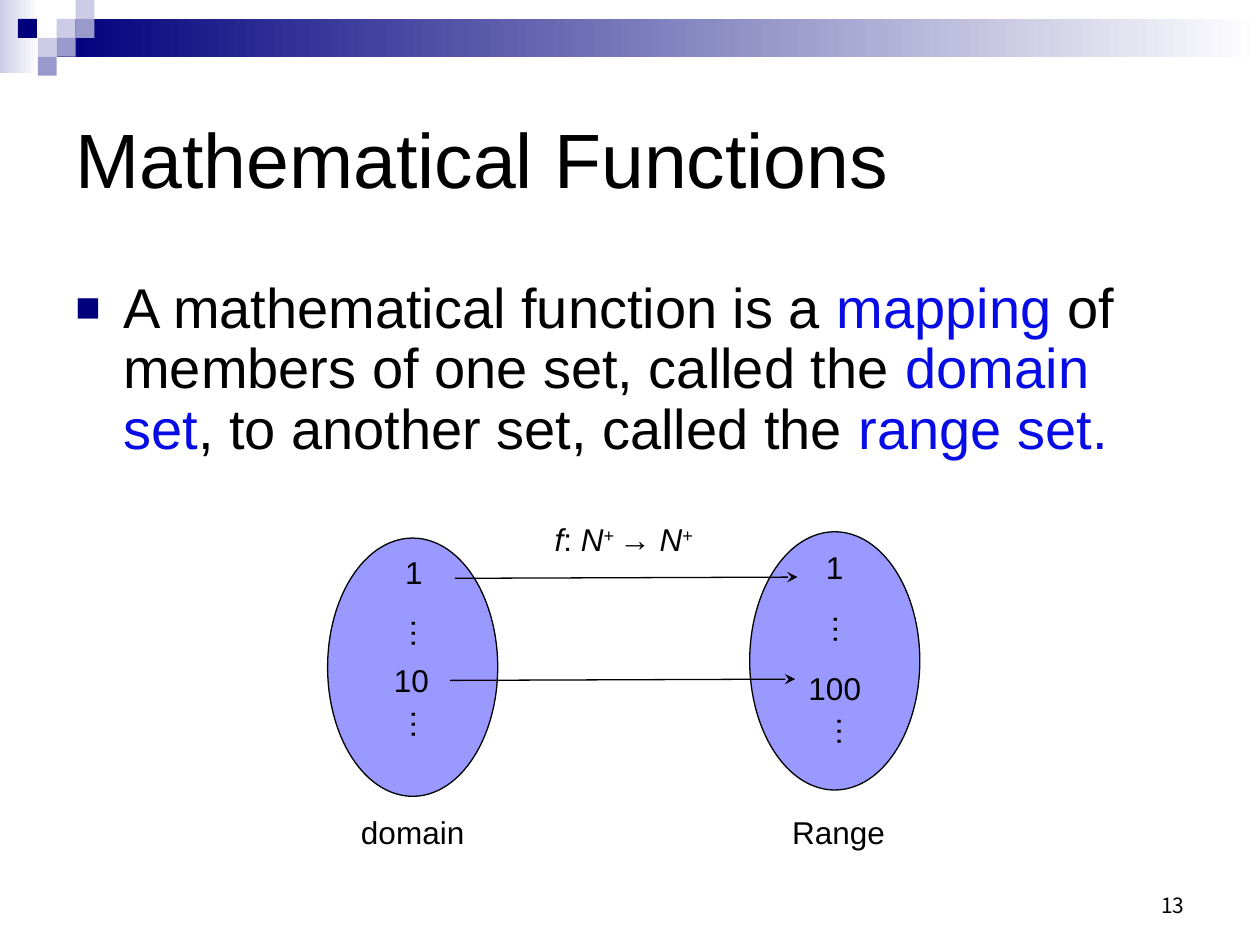
"""Build the Mathematical Functions slide: a definition above a domain-to-range mapping."""
import pptx
import pptx.util
import pptx.dml.color
import pptx.enum.shapes
import pptx.enum.text
import pptx.oxml
import pptx.oxml.ns

W, H = 10, 7.5
THEME = {
    "font": "Arial", "number_font": "Noto Sans CJK KR",
    "title": 44, "body": 32, "label": 18, "number": 12, "line": 0.75,
    "text": "000000", "accent": "070CE5", "set": "9999FF",
    "navy": "00007D", "mid": "9999CC", "pale": "CCCCE6", "white": "FFFFFF",
}
CELL = 0.15
BANDS = [((0, 0, 0.31, 0.58), "pale"), ((3 * CELL, CELL, W - 3 * CELL, 2 * CELL), "navy")]
SQUARES = [(3, 1, "pale"), (4, 0, "pale"), (4, 1, "mid"), (2, 2, "pale"),
           (0.95, 1, "navy"), (3, 2, "mid"), (2, 3, "mid")]
TITLE = [("Mathematical Functions", "")]
BODY = [("A mathematical function is a ", ""), ("mapping", "accent"),
        (" of members of one set, called the ", ""), ("domain set", "accent"),
        (", to another set, called the ", ""), ("range set.", "accent")]
FORMULA = [("f", "italic"), (": ", ""), ("N", "italic"), ("+ ", "super"),
           ("→ ", ""), ("N", "italic"), ("+", "super")]
OVAL = (1.35, 2.05)
LABEL_H = 0.4
SETS = [
    {"at": (5.95, 4.22), "labels": [("1", 0, 4.5, 0.34), ("100", 0, 5.46, 0.62),
                                    ("Range", 0.03, 6.6, 0.94)],
     "dots": [(-0.08, 5.0), (-0.05, 5.81)]},
    {"at": (2.6, 4.27), "labels": [("1", 0.01, 4.54, 0.34), ("10", -0.01, 5.4, 0.48),
                                   ("domain", 0, 6.6, 1.02)],
     "dots": [(-0.08, 5.03), (-0.08, 5.75)]},
]
ARROWS = [(3.57, 5.4, 6.31, 5.39), (3.61, 4.59, 6.33, 4.58)]
ALIGN = pptx.enum.text.PP_ALIGN
ANCHOR = pptx.enum.text.MSO_ANCHOR
SHAPE = pptx.enum.shapes.MSO_SHAPE


def inches(*values):
    return [pptx.util.Inches(v) for v in values]


def rgb(name):
    return pptx.dml.color.RGBColor.from_string(THEME[name])


def add_xml(parent, xml):
    ns = pptx.oxml.ns.nsdecls("a")
    parent.append(pptx.oxml.parse_xml(xml.replace("/>", f" {ns}/>", 1)))


def add_shape(s, kind, box, color, outlined=False, fade=False):
    sp = s.shapes.add_shape(kind, *inches(*box))
    sp.shadow.inherit = False
    if fade:
        sp.fill.gradient()
        sp.fill.gradient_angle = 0
        for stop, name in zip(sp.fill.gradient_stops, (color, "white")):
            stop.color.rgb = rgb(name)
    else:
        sp.fill.solid()
        sp.fill.fore_color.rgb = rgb(color)
    if outlined:
        sp.line.color.rgb = rgb("text")
        sp.line.width = pptx.util.Pt(THEME["line"])
    else:
        sp.line.fill.background()


def add_text(s, box, runs, size, font="font", align=ALIGN.LEFT, anchor=ANCHOR.TOP, wrap=True):
    sp = s.shapes.add_textbox(*inches(*box))
    tf = sp.text_frame
    tf.word_wrap, tf.vertical_anchor = wrap, anchor
    p = tf.paragraphs[0]
    p.alignment = align
    p.font.name, p.font.size = THEME[font], pptx.util.Pt(THEME[size])
    p.font.color.rgb = rgb("text")
    for text, style in runs:
        r = p.add_run()
        r.text = text
        if style == "accent":
            r.font.color.rgb = rgb("accent")
        elif style == "italic":
            r.font.italic = True
        elif style == "super":
            r.font._element.set("baseline", "30000")
    return sp


def add_label(s, cx, cy, width, runs):
    box = (cx - width / 2, cy - LABEL_H / 2, width, LABEL_H)
    return add_text(s, box, runs, "label", align=ALIGN.CENTER, wrap=False)


def add_bullet(p):
    p.line_spacing = 0.9
    p.space_before = pptx.util.Pt(0.2 * THEME["body"])
    pPr = p._p.get_or_add_pPr()
    indent = pptx.util.Inches(0.38)
    pPr.set("marL", str(indent))
    pPr.set("indent", str(-indent))
    bullet = pptx.oxml.parse_xml(
        f'<a:pPr {pptx.oxml.ns.nsdecls("a")}><a:buClr><a:srgbClr val="{THEME["navy"]}"/></a:buClr>'
        '<a:buSzPct val="75000"/><a:buFont typeface="Arial"/><a:buChar char="■"/></a:pPr>')
    position = [child.tag for child in pPr].index(pptx.oxml.ns.qn("a:defRPr"))
    for offset, child in enumerate(list(bullet)):
        pPr.insert(position + offset, child)


def add_arrow(s, ends):
    line = s.shapes.add_connector(pptx.enum.shapes.MSO_CONNECTOR.STRAIGHT, *inches(*ends))
    line.line.color.rgb = rgb("text")
    line.line.width = pptx.util.Pt(THEME["line"])
    add_xml(line.line._get_or_add_ln(), '<a:tailEnd type="stealth"/>')
    add_xml(line._element.spPr, "<a:effectLst/>")


def main():
    prs = pptx.Presentation()
    prs.slide_width, prs.slide_height = inches(W, H)
    s = prs.slides.add_slide(prs.slide_layouts[6])
    for box, color in BANDS:
        add_shape(s, SHAPE.RECTANGLE, box, color, fade=True)
    for col, row, color in SQUARES:
        add_shape(s, SHAPE.RECTANGLE, (col * CELL, row * CELL, CELL, CELL), color)

    margin = W / 20
    add_text(s, (7.17, 6.83, 2.33, 0.5), [("13", "")], "number", "number_font",
             ALIGN.RIGHT, ANCHOR.BOTTOM)
    add_text(s, (margin, 0.5, W - 2 * margin, 1.5), TITLE, "title", anchor=ANCHOR.MIDDLE)
    body = add_text(s, (margin, 2.17, W - 2 * margin, 1.55), BODY, "body")
    add_bullet(body.text_frame.paragraphs[0])

    for group in SETS:
        add_shape(s, SHAPE.OVAL, group["at"] + OVAL, "set", outlined=True)
        center = group["at"][0] + OVAL[0] / 2
        for text, dx, cy, width in group["labels"]:
            add_label(s, center + dx, cy, width, [(text, "")])
        for dx, cy in group["dots"]:
            add_label(s, center + dx, cy, 0.45, [("…", "")]).rotation = 270
    for ends in ARROWS:
        add_arrow(s, ends)
    add_label(s, 4.95, 4.28, 1.35, FORMULA)
    prs.save("out.pptx")


if __name__ == "__main__":
    main()
